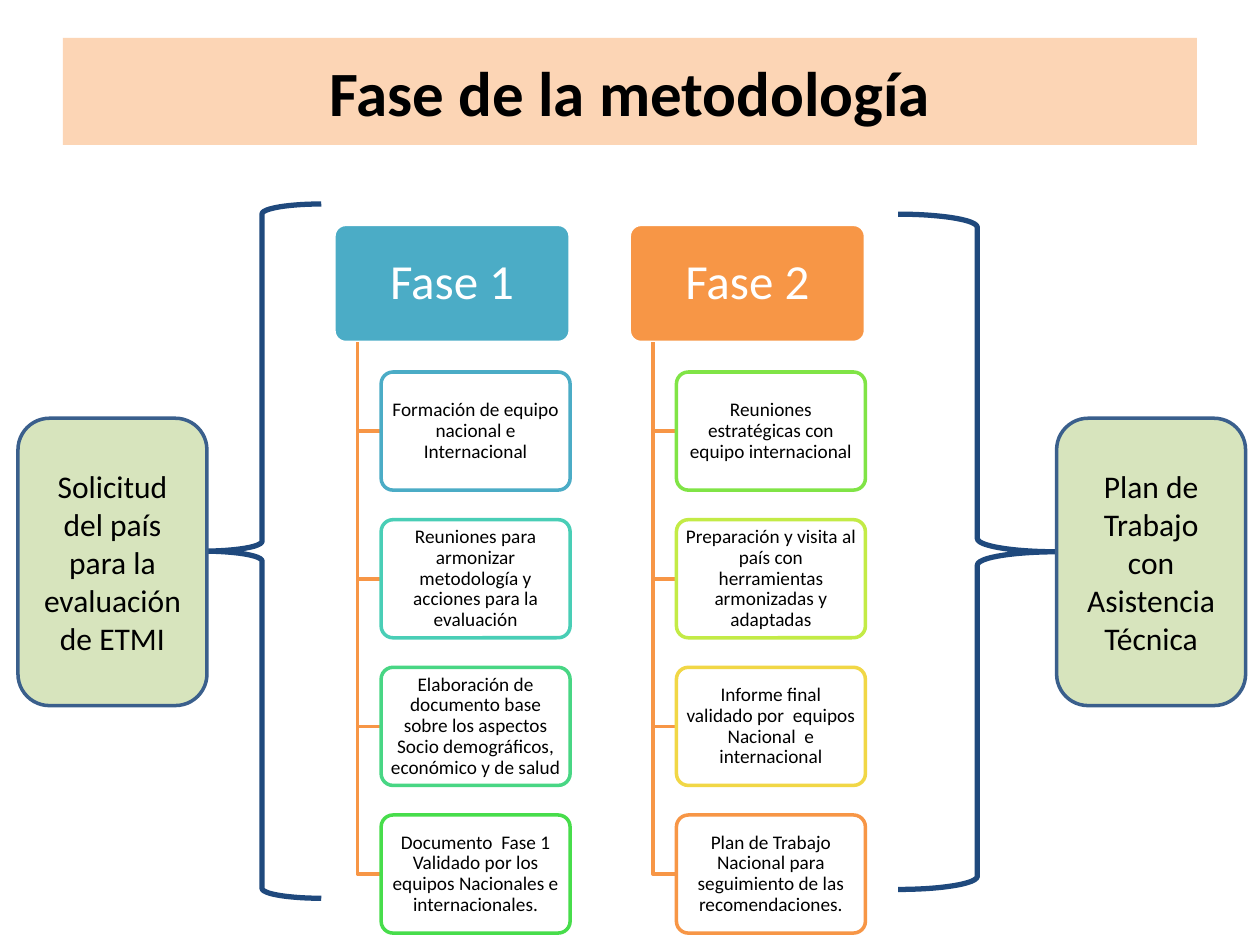
from lxml import etree
from pptx import Presentation
from pptx.dml.color import RGBColor
from pptx.enum.shapes import MSO_SHAPE
from pptx.enum.text import MSO_ANCHOR, PP_ALIGN
from pptx.oxml.ns import qn
from pptx.util import Pt

RECTANGLE = MSO_SHAPE.RECTANGLE
ROUNDED = MSO_SHAPE.ROUNDED_RECTANGLE
LEFT_BRACE = MSO_SHAPE.LEFT_BRACE
RIGHT_BRACE = MSO_SHAPE.RIGHT_BRACE
MIDDLE = MSO_ANCHOR.MIDDLE
CENTER = PP_ALIGN.CENTER

FONT = "Calibri"
BLACK, WHITE = "000000", "FFFFFF"
ORANGE, NAVY = "F79646", "1F497D"

UNIT = 67.5
COLUMN_LEFT, COLUMN_TOP = 190.8, 128.2

PHASES = [
    ("Fase 1", "4BACC6", [
        ("Formación de equipo nacional e Internacional", "4BACC6"),
        ("Reuniones para armonizar metodología y acciones para la evaluación", "49CEB6"),
        ("Elaboración de documento base sobre los aspectos Socio demográficos, "
         "económico y de salud", "48D684"),
        ("Documento  Fase 1 Validado por los equipos Nacionales e internacionales.", "47DD4B"),
    ]),
    ("Fase 2", ORANGE, [
        ("Reuniones estratégicas con equipo internacional", "80E446"),
        ("Preparación y visita al país con herramientas armonizadas y adaptadas", "C3EB46"),
        ("Informe final validado por  equipos Nacional  e internacional", "F1D746"),
        ("Plan de Trabajo Nacional para seguimiento de las recomendaciones.", ORANGE),
    ]),
]
ENDS = [
    ("Solicitud del país para la evaluación de ETMI", 10.3),
    ("Plan de Trabajo con Asistencia Técnica", 603.8),
]
BRACES = [
    (LEFT_BRACE, (115.9, 116.6, 67.7, 396.7)),
    (RIGHT_BRACE, (513.2, 122.4, 90.6, 385.9)),
]


def color(hex_string):
    """Return the colour for a hex string."""
    return RGBColor.from_string(hex_string)


def paint(shape, fill, line, width=2):
    """Set the fill and outline of a shape, None meaning neither, and drop its shadow."""
    shape.shadow.inherit = False
    if fill:
        shape.fill.solid()
        shape.fill.fore_color.rgb = color(fill)
    else:
        shape.fill.background()
    if line:
        shape.line.color.rgb = color(line)
        shape.line.width = Pt(width)
    else:
        shape.line.fill.background()


def add_shape(slide, kind, box, fill, line, width=2):
    """Add a painted preset shape in a box given in points."""
    shape = slide.shapes.add_shape(kind, *map(Pt, box))
    paint(shape, fill, line, width)
    return shape


def write(shape, text, size, ink=BLACK, bold=False, spacing=1.0, insets=(7.2, 3.6)):
    """Write one centred paragraph in the middle of a shape."""
    frame = shape.text_frame
    horizontal, vertical = map(Pt, insets)
    frame_format = {
        "word_wrap": True, "vertical_anchor": MIDDLE,
        "margin_left": horizontal, "margin_right": horizontal,
        "margin_top": vertical, "margin_bottom": vertical,
    }
    for name, value in frame_format.items():
        setattr(frame, name, value)
    paragraph = frame.paragraphs[0]
    paragraph.text = text
    paragraph.alignment = CENTER
    paragraph.line_spacing = spacing
    for name, value in {"name": FONT, "size": Pt(size), "bold": bold}.items():
        setattr(paragraph.font, name, value)
    paragraph.font.color.rgb = color(ink)


def set_opacity(shape, percent):
    """Make the solid fill of a shape partly transparent."""
    fill_color = shape._element.spPr.find(qn("a:solidFill"))[0]
    etree.SubElement(fill_color, qn("a:alpha")).set("val", str(percent * 1000))


def add_elbow(slide, left, top, right, bottom):
    """Draw a line down from the header and across to a step."""
    builder = slide.shapes.build_freeform(Pt(left), Pt(top))
    builder.add_line_segments([(Pt(left), Pt(bottom)), (Pt(right), Pt(bottom))], close=False)
    paint(builder.convert_to_shape(), None, ORANGE)


def add_title(slide, box):
    """Add the title band."""
    title = add_shape(slide, RECTANGLE, box, "FCD5B5", None)
    write(title, "Fase de la metodología", 36, bold=True)


def add_phase(slide, left, top, unit, heading, fill, steps):
    """Add a phase header with its steps hanging below, sized by the header height."""
    header = add_shape(slide, ROUNDED, (left, top, 2 * unit, unit), fill, WHITE)
    header.adjustments[0] = 0.1
    write(header, heading, 28, WHITE, spacing=0.9, insets=(6.2, 4.8))
    step_left = left + 0.4 * unit
    for number, (text, outline) in enumerate(steps, 1):
        step_top = top + 1.25 * unit * number
        add_elbow(slide, left + 0.2 * unit, top + unit, step_left, step_top + unit / 2)
        step = add_shape(slide, ROUNDED, (step_left, step_top, 1.6 * unit, unit), WHITE, outline)
        step.adjustments[0] = 0.1
        set_opacity(step, 90)
        write(step, text, 11, spacing=0.9, insets=(3.4, 3.4))


def add_end(slide, box, text):
    """Add a green box for the start or the result of the process."""
    write(add_shape(slide, ROUNDED, box, "D7E4BD", "3A5F8C"), text, 18)


def main():
    """Build the slide and save it."""
    presentation = Presentation()
    presentation.slide_width, presentation.slide_height = Pt(720), Pt(540)
    slide = presentation.slides.add_slide(presentation.slide_layouts[6])
    add_title(slide, (36, 21.6, 648, 61.2))
    for index, phase in enumerate(PHASES):
        add_phase(slide, COLUMN_LEFT + 2.5 * UNIT * index, COLUMN_TOP, UNIT, *phase)
    for kind, box in BRACES:
        add_shape(slide, kind, box, None, NAVY, 3)
    for text, left in ENDS:
        add_end(slide, (left, 239, 108, 164.2), text)
    presentation.save("out.pptx")


if __name__ == "__main__":
    main()
